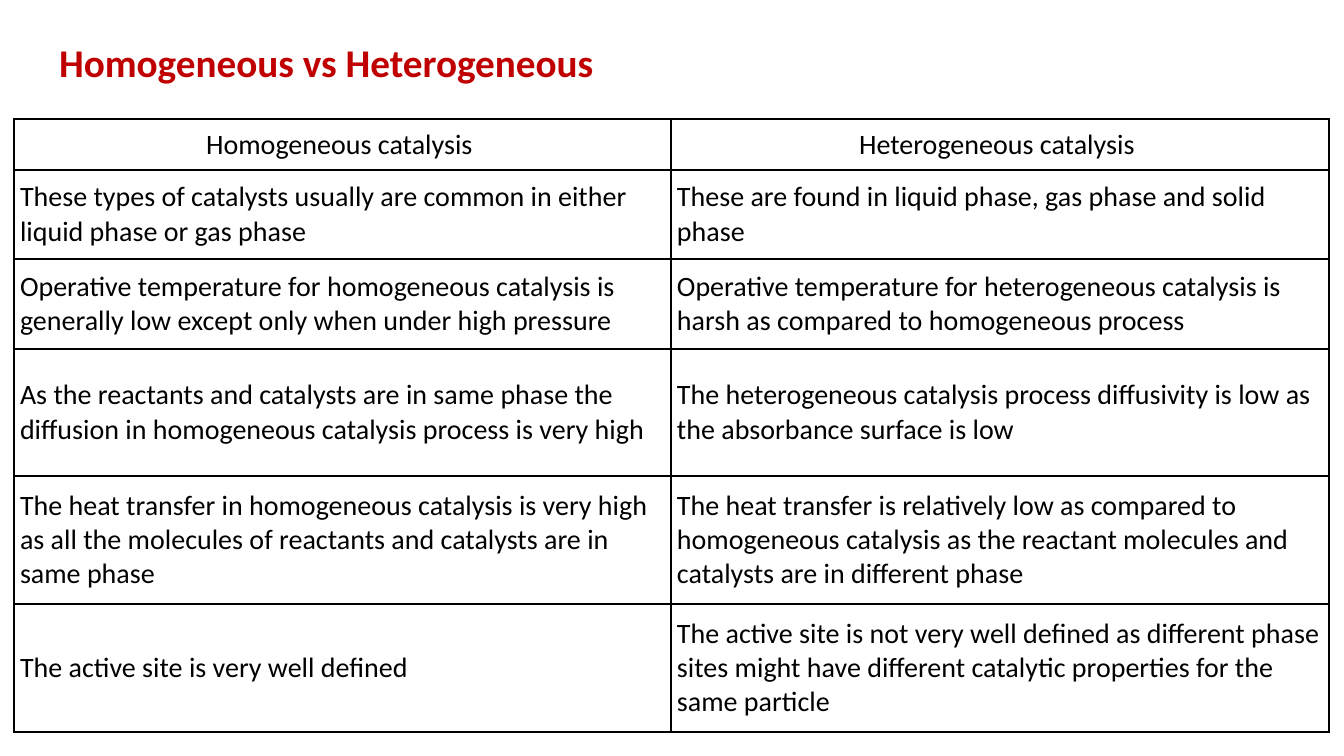
from pptx import Presentation
from pptx.dml.color import RGBColor
from pptx.enum.text import MSO_ANCHOR, PP_ALIGN
from pptx.oxml import parse_xml
from pptx.oxml.ns import nsdecls
from pptx.util import Emu, Pt

# Content
TITLE = "Homogeneous vs Heterogeneous"
ROWS = [
    ("Homogeneous catalysis ", "Heterogeneous catalysis "),
    ("These types of catalysts usually are common in either liquid phase or gas phase ",
     "These are found in liquid phase, gas phase and solid phase"),
    ("Operative temperature for homogeneous catalysis is generally low except only when under high pressure ",
     "Operative temperature for heterogeneous catalysis is harsh as compared to homogeneous process"),
    ("As the reactants and catalysts are in same phase the diffusion in homogeneous catalysis process is very high ",
     "The heterogeneous catalysis process diffusivity is low as the absorbance surface is low"),
    ("The heat transfer in homogeneous catalysis is very high as all the molecules of reactants and catalysts are in same phase",
     "The heat transfer is relatively low as compared to homogeneous catalysis as the reactant molecules and catalysts are in different phase"),
    ("The active site is very well defined",
     "The active site is not very well defined as different phase sites might have different catalytic properties for the same particle"),
]

# Layout in px
SLIDE = (1344, 756)
TITLE_BOX = (49, 33, 570, 58)
TABLE_LEFT, TABLE_TOP = 14, 119
COLUMN_WIDTHS = (657, 658)
ROW_HEIGHTS = (51, 89, 90, 127, 128, 128)
CELL_INSET_X, CELL_INSET_Y = 6, 3
FONT, BLACK, RED = "Calibri", "000000", "C00000"


def px(length):
    return Emu(round(length * 914400 / 100.8))


def color(value):
    return RGBColor.from_string(value)


def format_text(para, size, value, align, bold=False):
    para.alignment = align
    for span in para.runs:
        span.font.name = FONT
        span.font.size = Pt(size)
        span.font.bold = bold
        span.font.color.rgb = color(value)


def add_borders(cell):
    properties = cell._tc.get_or_add_tcPr()
    for position, side in enumerate(("lnL", "lnR", "lnT", "lnB")):
        properties.insert(position, parse_xml(
            f'<a:{side} {nsdecls("a")} w="{Pt(1)}"><a:solidFill>'
            f'<a:srgbClr val="{BLACK}"/></a:solidFill></a:{side}>'))


def add_title(page):
    box = page.shapes.title
    box.left, box.top, box.width, box.height = map(px, TITLE_BOX)
    frame = box.text_frame
    frame.text = TITLE
    frame.word_wrap = False
    frame.vertical_anchor = MSO_ANCHOR.TOP
    format_text(frame.paragraphs[0], 28, RED, PP_ALIGN.LEFT, bold=True)


def add_comparison(page):
    table = page.shapes.add_table(
        len(ROWS), len(COLUMN_WIDTHS), px(TABLE_LEFT), px(TABLE_TOP),
        px(sum(COLUMN_WIDTHS)), px(sum(ROW_HEIGHTS))).table
    table.horz_banding = False
    for column, width in zip(table.columns, COLUMN_WIDTHS):
        column.width = px(width)
    for row, height in zip(table.rows, ROW_HEIGHTS):
        row.height = px(height)
    for row_index, texts in enumerate(ROWS):
        align = PP_ALIGN.LEFT if row_index else PP_ALIGN.CENTER
        for column_index, text in enumerate(texts):
            cell = table.cell(row_index, column_index)
            cell.text_frame.text = text
            cell.fill.background()
            cell.vertical_anchor = MSO_ANCHOR.MIDDLE
            cell.margin_left = cell.margin_right = px(CELL_INSET_X)
            cell.margin_top = cell.margin_bottom = px(CELL_INSET_Y)
            format_text(cell.text_frame.paragraphs[0], 20, BLACK, align)
            add_borders(cell)


def main():
    deck = Presentation()
    deck.slide_width, deck.slide_height = map(px, SLIDE)
    page = deck.slides.add_slide(deck.slide_layouts[5])
    # Heading and comparison table
    add_title(page)
    add_comparison(page)
    deck.save("out.pptx")


if __name__ == "__main__":
    main()
